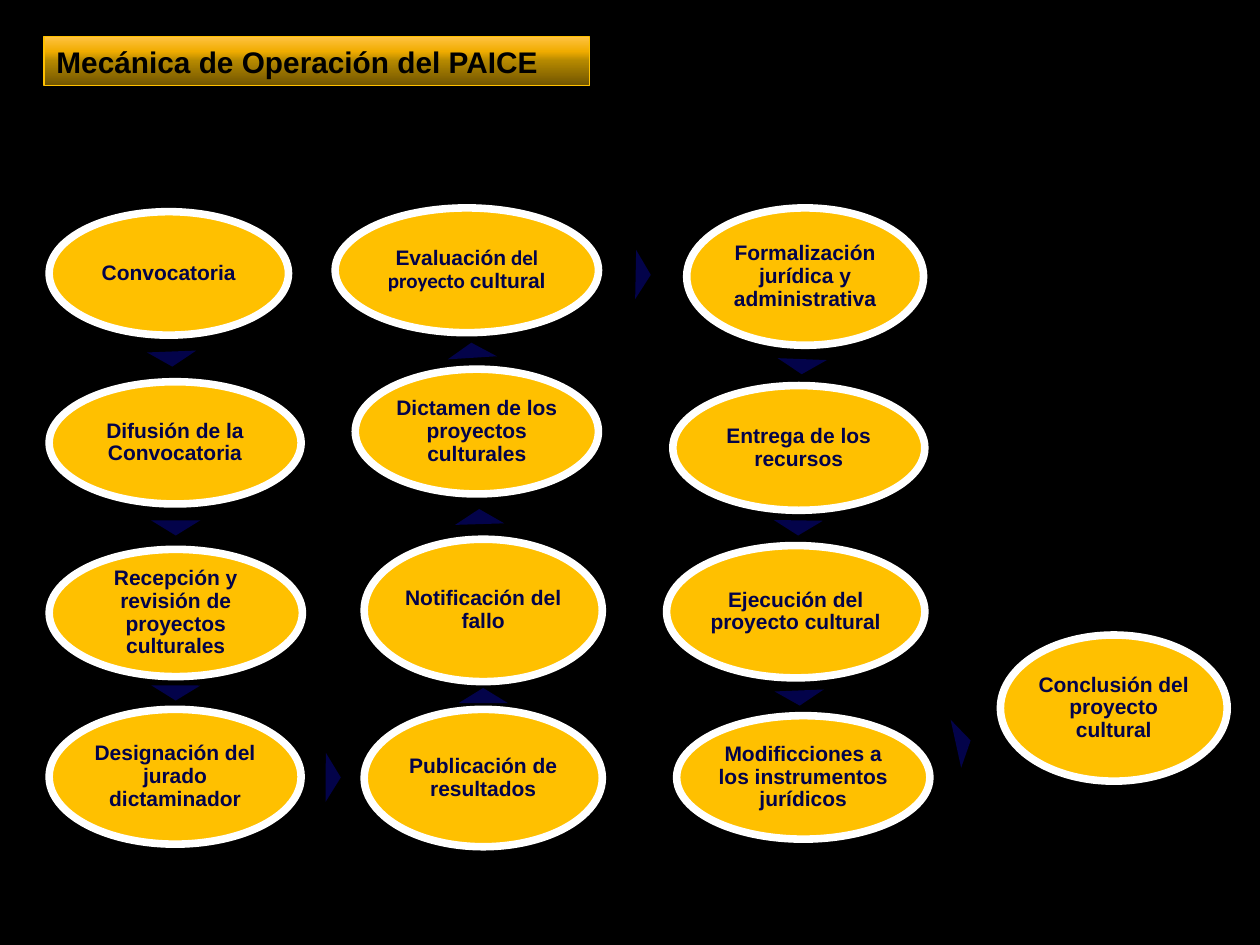
from lxml import etree
from pptx import Presentation
from pptx.dml.color import RGBColor
from pptx.enum import shapes, text
from pptx.oxml.ns import qn
from pptx.util import Pt

PX = 9144  # 100 px to the inch

BLACK = RGBColor(0, 0, 0)
WHITE = RGBColor(255, 255, 255)
GOLD = RGBColor(0xFF, 0xC0, 0x00)
NAVY = RGBColor(0x03, 0x03, 0x4A)
SHEEN = [
    (0, RGBColor(0x70, 0x54, 0x00)),
    (50, RGBColor(0xB4, 0x88, 0x00)),
    (70, RGBColor(0xF0, 0xAC, 0x00)),
    (100, RGBColor(0xFF, 0xC3, 0x42)),
]

# left, top, width, height, text (a list holds runs with their own font)
STEPS = [
    (39, 168, 190, 98, "Convocatoria"),
    (39, 303, 200, 97, "Difusión de la Convocatoria"),
    (39, 436, 201, 101, "Recepción y revisión de proyectos culturales"),
    (39, 563, 200, 107, "Designación del jurado dictaminador"),
    (289, 563, 189, 109, "Publicación de resultados"),
    (289, 428, 189, 113, "Notificación del fallo"),
    (282, 293, 193, 99, "Dictamen de los proyectos culturales"),
    (266, 165, 209, 99, [("Evaluación", "Arial"), (" del proyecto ", "Calibri"),
                         ("cultural", "Arial")]),
    (545, 165, 188, 109, "Formalización jurídica y administrativa"),
    (534, 306, 200, 99, "Entrega de los recursos"),
    (529, 433, 205, 105, "Ejecución del proyecto cultural"),
    (537, 568, 201, 98, "Modificciones a los instrumentos jurídicos"),
    (794, 504, 180, 116, "Conclusión del proyecto cultural"),
]

# left, top, rotation of the arrow that follows each step but the last
ARROWS = [
    (117, 279, 177.8), (120, 413, 179.9), (120, 544, 180.2), (245, 611, 90.3),
    (364, 546, 359.9), (361, 404, 358.2), (355, 272, 356.4), (491, 212, 91.1),
    (617, 285, 182.2), (614, 413, 180.9), (615, 548, 177.7), (745, 583, 77.6),
]


class Deck:
    def __init__(self, wide, high):
        self.prs = Presentation()
        self.prs.slide_width, self.prs.slide_height = wide * PX, high * PX
        self.slide = self.prs.slides.add_slide(self.prs.slide_layouts[6])
        back = self.slide.background.fill
        back.solid()
        back.fore_color.rgb = BLACK

    def shape(self, kind, box, fill, line=None, width=0):
        item = self.slide.shapes.add_shape(kind, *(n * PX for n in box))
        item.shadow.inherit = False
        item.fill.solid()
        item.fill.fore_color.rgb = fill
        if line is None:
            item.line.fill.background()
        else:
            item.line.color.rgb = line
            item.line.width = Pt(width)
        return item

    def label(self, item, runs, size, color, align):
        frame = item.text_frame
        frame.word_wrap = True
        frame.vertical_anchor = text.MSO_ANCHOR.MIDDLE
        para = frame.paragraphs[0]
        para.alignment = align
        font = para.font
        font.size, font.bold, font.name = Pt(size), True, "Arial"
        font.color.rgb = color
        if isinstance(runs, str):
            runs = [(runs, None)]
        for words, face in runs:
            run = para.add_run()
            run.text = words
            if face:
                run.font.name = face
        return frame

    def step(self, *box, words):
        oval = self.shape(shapes.MSO_SHAPE.OVAL, box, GOLD, WHITE, 4.33)
        frame = self.label(oval, words, 12, NAVY, text.PP_ALIGN.CENTER)
        frame.margin_left = frame.margin_right = 2 * PX
        frame.margin_top = frame.margin_bottom = 2 * PX
        frame.paragraphs[0].line_spacing = 0.9

    def arrow(self, left, top, turn):
        mark = self.shape(shapes.MSO_SHAPE.ISOSCELES_TRIANGLE,
                          (left, top, 39, 12), NAVY)
        mark.rotation = turn

    def title(self, box, words):
        bar = self.shape(shapes.MSO_SHAPE.RECTANGLE, box, GOLD, GOLD, 0.75)
        bar.fill.gradient()
        bar.fill.gradient_angle = 90
        stops = bar._element.spPr.find(qn("a:gradFill")).find(qn("a:gsLst"))
        for old in list(stops):
            stops.remove(old)
        for pos, color in SHEEN:
            stop = etree.SubElement(stops, qn("a:gs"), pos=str(pos * 1000))
            etree.SubElement(stop, qn("a:srgbClr"), val=str(color))
        self.label(bar, words, 17, BLACK, text.PP_ALIGN.LEFT)


def main():
    deck = Deck(1000, 750)
    for *box, words in STEPS:
        deck.step(*box, words=words)
    for spot in ARROWS:
        deck.arrow(*spot)
    deck.title((35, 29, 433, 39), "Mecánica de Operación del PAICE")
    deck.prs.save("out.pptx")


if __name__ == "__main__":
    main()
